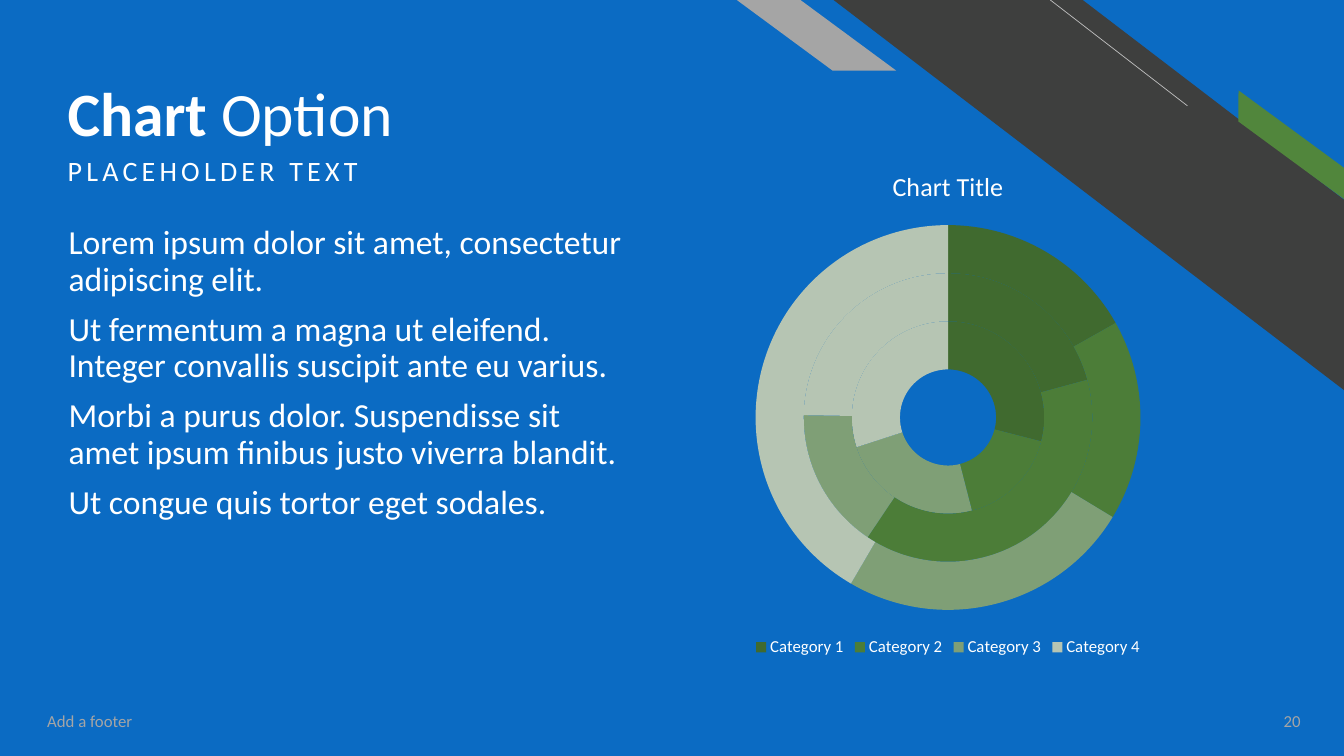
from dataclasses import dataclass

from lxml import etree
from pptx import Presentation
from pptx.chart.data import CategoryChartData
from pptx.dml.color import RGBColor
from pptx.enum.chart import XL_CHART_TYPE, XL_LEGEND_POSITION
from pptx.enum.shapes import MSO_CONNECTOR, MSO_SHAPE
from pptx.enum.text import MSO_ANCHOR, MSO_AUTO_SIZE, PP_ALIGN
from pptx.oxml.ns import qn
from pptx.util import Inches, Pt

BLUE = RGBColor(0x0B, 0x6B, 0xC3)
CHARCOAL = RGBColor(0x3E, 0x3F, 0x3E)
GREEN = RGBColor(0x51, 0x86, 0x3C)
GRAY = RGBColor(0xA5, 0xA5, 0xA5)
PALE_GRAY = RGBColor(0xBF, 0xBF, 0xBF)
WHITE = RGBColor(0xFF, 0xFF, 0xFF)
CATEGORY_COLORS = [
    RGBColor(0x40, 0x6A, 0x2F),
    RGBColor(0x4C, 0x7D, 0x38),
    RGBColor(0x7F, 0x9F, 0x76),
    RGBColor(0xB6, 0xC5, 0xB3),
]

FONT = "Calibri"
STRIPE = MSO_SHAPE.DIAGONAL_STRIPE
PARALLELOGRAM = MSO_SHAPE.PARALLELOGRAM
STRAIGHT = MSO_CONNECTOR.STRAIGHT
DOUGHNUT = XL_CHART_TYPE.DOUGHNUT
LEGEND_BOTTOM = XL_LEGEND_POSITION.BOTTOM
TOP, MIDDLE, BOTTOM = MSO_ANCHOR.TOP, MSO_ANCHOR.MIDDLE, MSO_ANCHOR.BOTTOM
LEFT, RIGHT = PP_ALIGN.LEFT, PP_ALIGN.RIGHT
NO_FIT = MSO_AUTO_SIZE.NONE

PARAGRAPHS = [
    "Lorem ipsum dolor sit amet, consectetur adipiscing elit.",
    "Ut fermentum a magna ut eleifend. Integer convallis suscipit ante eu varius.",
    "Morbi a purus dolor. Suspendisse sit amet ipsum finibus justo viverra blandit.",
    "Ut congue quis tortor eget sodales.",
]
CATEGORIES = ["Category 1", "Category 2", "Category 3", "Category 4"]
SERIES = {
    "Series 1": (29, 17, 24, 30),
    "Series 2": (21, 39, 16, 25),
    "Series 3": (17, 17, 25, 42),
}
RING_LAYOUT = {"x": 0.25, "y": 0.15, "w": 0.5, "h": 0.75}


@dataclass
class Box:
    """A rectangle whose regions are given as percentages of its size."""

    left: int
    top: int
    width: int
    height: int

    def region(self, left, top, width, height):
        """Return the box at the given percentages of this one."""
        return Box(
            round(self.left + self.width * left / 100),
            round(self.top + self.height * top / 100),
            round(self.width * width / 100),
            round(self.height * height / 100),
        )

    def bounds(self):
        """Return left, top, width and height."""
        return self.left, self.top, self.width, self.height


def style_font(font, size, color):
    """Set the typeface, size and colour of a font."""
    font.name = FONT
    font.size = Pt(size)
    font.color.rgb = color


def fill_text(shape, box, lines, size, color, anchor=TOP, align=LEFT):
    """Move a text shape to the box and fill it with plain paragraphs."""
    shape.left, shape.top, shape.width, shape.height = box.bounds()
    frame = shape.text_frame
    frame.text = "\n".join(lines)
    frame.word_wrap = True
    frame.auto_size = NO_FIT
    frame.vertical_anchor = anchor
    for para in frame.paragraphs:
        para.alignment = align
        for span in para.runs:
            style_font(span.font, size, color)
    return frame


def space_body(frame):
    """Give body paragraphs their spacing and remove their bullets."""
    for para in frame.paragraphs:
        para.line_spacing = 0.9
        para.space_before = Pt(10)
        properties = para._p.get_or_add_pPr()
        properties.set("marL", "0")
        properties.set("indent", "0")
        etree.SubElement(properties, qn("a:buNone"))


def add_band(page, kind, box, color, slant, rotation=0):
    """Add a mirrored slanted band."""
    band = page.shapes.add_shape(kind, *box.bounds())
    band.adjustments[0] = slant
    band.rotation = rotation
    band.shadow.inherit = False
    band.fill.solid()
    band.fill.fore_color.rgb = color
    band.line.fill.background()
    band._element.spPr.find(qn("a:xfrm")).set("flipH", "1")


def add_corner(page, box):
    """Draw the slanted bands and thin line of the top right corner."""
    add_band(page, STRIPE, box.region(15.92, 0, 84.08, 100), CHARCOAL, 0.512)
    start, end = box.region(74.21, 27.13, 0, 0), box.region(51.63, 0, 0, 0)
    line = page.shapes.add_connector(
        STRAIGHT, start.left, start.top, end.left, end.top
    )
    line.line.color.rgb = PALE_GRAY
    line.line.width = Pt(0.5)
    etree.SubElement(line._element.spPr, qn("a:effectLst"))
    add_band(page, PARALLELOGRAM, box.region(79.03, 33.86, 24.57, 6.45), GREEN, 0.72, 36.3)
    add_band(page, PARALLELOGRAM, box.region(0, 0, 26.23, 18.08), GRAY, 1.356)


def add_heading(page, box):
    """Fill the title and the spaced subtitle."""
    frame = fill_text(
        page.shapes.title, box.region(0, 0, 100, 64.62), ["Chart "], 44, WHITE, BOTTOM
    )
    frame.margin_bottom = 0
    para = frame.paragraphs[0]
    para.line_spacing = 0.9
    para.runs[0].font.bold = True
    span = para.add_run()
    span.text = "Option"
    style_font(span.font, 44, WHITE)
    span.font.bold = False

    frame = fill_text(
        page.placeholders[1], box.region(0, 65.62, 88.47, 34.35),
        ["PLACEHOLDER TEXT"], 20, WHITE,
    )
    space_body(frame)
    frame.paragraphs[0].runs[0].font._element.set("spc", "300")


def add_body(page, box):
    """Fill the list of paragraphs."""
    space_body(fill_text(page.placeholders[2], box, PARAGRAPHS, 24, WHITE))


def add_rings(page, box):
    """Add the doughnut chart with its title and legend."""
    data = CategoryChartData()
    data.categories = CATEGORIES
    for name, values in SERIES.items():
        data.add_series(name, values)
    chart = page.shapes.add_chart(DOUGHNUT, *box.bounds(), data).chart
    style_font(chart.font, 10, CHARCOAL)
    chart.has_title = True
    chart.chart_title.text_frame.text = "Chart Title"
    title_font = chart.chart_title.text_frame.paragraphs[0].runs[0].font
    style_font(title_font, 18.6, WHITE)
    title_font.bold = False
    chart.has_legend = True
    chart.legend.position = LEGEND_BOTTOM
    chart.legend.include_in_layout = False
    style_font(chart.legend.font, 12, WHITE)
    chart.plots[0].vary_by_categories = True
    for ring in chart.plots[0].series:
        for index, color in enumerate(CATEGORY_COLORS):
            piece = ring.points[index].format
            piece.fill.solid()
            piece.fill.fore_color.rgb = color
            piece.line.fill.background()

    plot_area = chart.element.find(".//" + qn("c:plotArea"))
    for layout in plot_area.findall(qn("c:layout")):
        plot_area.remove(layout)
    layout = etree.Element(qn("c:layout"))
    plot_area.insert(0, layout)
    manual = etree.SubElement(layout, qn("c:manualLayout"))
    settings = {"layoutTarget": "inner", "xMode": "edge", "yMode": "edge", **RING_LAYOUT}
    for name, value in settings.items():
        etree.SubElement(manual, qn("c:" + name)).set("val", str(value))


def add_footer(page, box):
    """Add the footer text and the page number."""
    for area, text, align in (
        (box.region(0, 0, 35.63, 100), "Add a footer", LEFT),
        (box.region(93.58, 0, 6.42, 100), "20", RIGHT),
    ):
        label = page.shapes.add_textbox(*area.bounds())
        fill_text(label, area, [text], 12, GRAY, MIDDLE, align)


def main():
    """Build the slide and save it."""
    deck = Presentation()
    deck.slide_width, deck.slide_height = Inches(13.33), Inches(7.5)
    page = deck.slides.add_slide(deck.slide_layouts[3])
    page.background.fill.solid()
    page.background.fill.fore_color.rgb = BLUE
    whole = Box(0, 0, deck.slide_width, deck.slide_height)
    add_corner(page, whole.region(54.83, 0, 45.17, 51.6))
    add_heading(page, whole.region(4.28, 3.07, 68.33, 26))
    add_body(page, whole.region(4.35, 29.2, 42.83, 59.6))
    add_rings(page, whole.region(41.4, 19.6, 58.28, 67.87))
    add_footer(page, whole.region(2.78, 92.67, 94.73, 5.33))
    deck.save("out.pptx")


if __name__ == "__main__":
    main()
